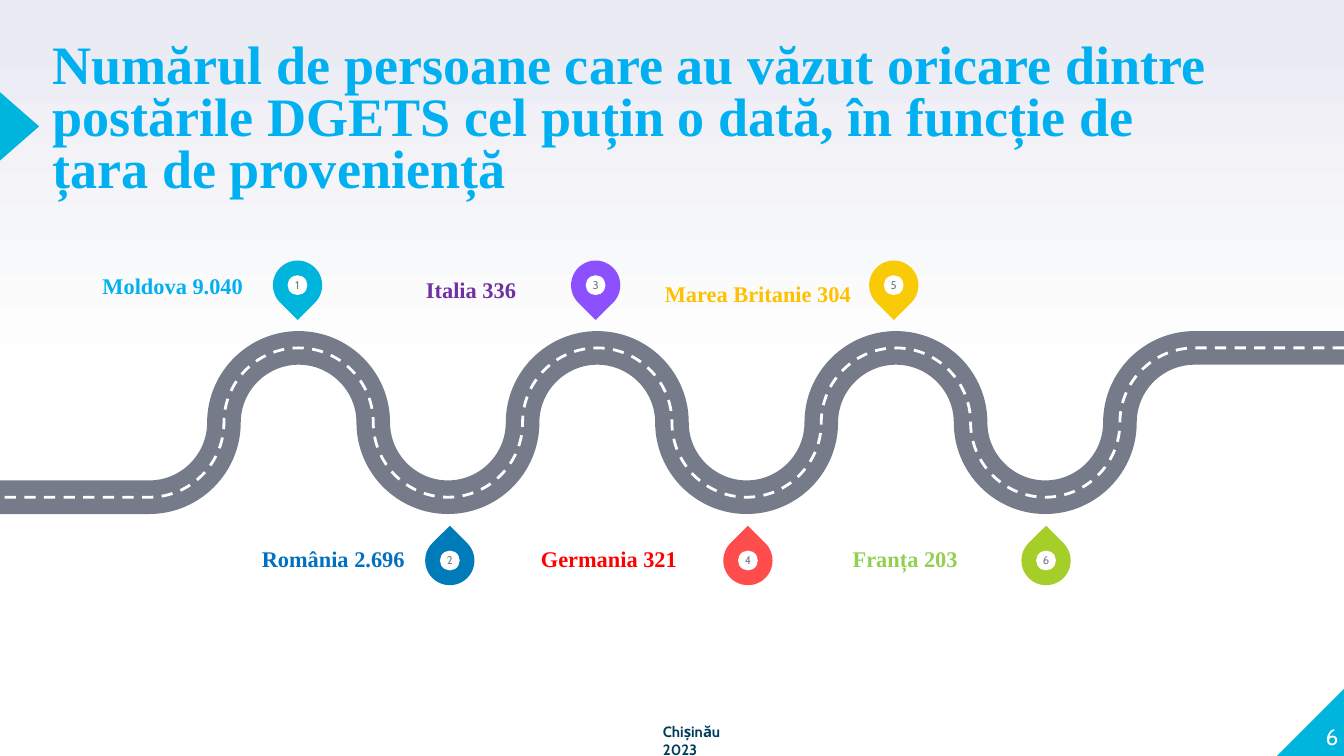
from dataclasses import dataclass

from lxml.etree import SubElement
from pptx import Presentation
from pptx.dml.color import RGBColor
from pptx.enum.dml import MSO_LINE
from pptx.enum.shapes import MSO_SHAPE
from pptx.enum.text import MSO_ANCHOR, PP_ALIGN
from pptx.oxml.ns import qn
from pptx.util import Pt

SERIF, SANS = "Times New Roman", "Cabin"
WHITE = RGBColor(0xFF, 0xFF, 0xFF)
LAVENDER = RGBColor(0xE9, 0xEA, 0xF2)
CYAN = RGBColor(0x00, 0xB5, 0xDD)
SKY = RGBColor(0x00, 0xB0, 0xF0)
GRAY = RGBColor(0x75, 0x7B, 0x89)
NAVY = RGBColor(0x00, 0x3D, 0x5C)
VIOLET = RGBColor(0x8C, 0x50, 0xFF)
PURPLE = RGBColor(0x70, 0x30, 0xA0)
YELLOW = RGBColor(0xF9, 0xCB, 0x07)
AMBER = RGBColor(0xFF, 0xC0, 0x00)
LIME = RGBColor(0xA6, 0xCE, 0x28)
GREEN = RGBColor(0x92, 0xD0, 0x50)
CORAL = RGBColor(0xFF, 0x4D, 0x4D)
RED = RGBColor(0xFF, 0x00, 0x00)
OCEAN = RGBColor(0x00, 0x7B, 0xB9)
BLUE = RGBColor(0x00, 0x70, 0xC0)

SLIDE_WIDTH, SLIDE_HEIGHT = 720, 405
ROAD_MIDDLE, BEND_RADIUS, QUARTER_COUNT = 226.4, 40, 14
ARC_HANDLE = 0.55  # control point distance for a quarter circle
PIN_SIZE, DOT_SIZE, PIN_PITCH = 26.4, 10.6, 159.7
LABEL_WIDTH, LABEL_HEIGHT = 101.5, 41.8


@dataclass(frozen=True)
class Stop:
    number: int
    label: str
    pin_color: RGBColor
    label_color: RGBColor
    label_left: float
    label_top: float

    @property
    def above_road(self) -> bool:
        return self.number % 2 == 1


STOPS = [
    Stop(1, "Moldova 9.040", CYAN, SKY, 41.8, 118.4),
    Stop(2, "România 2.696", OCEAN, BLUE, 127.8, 291.9),
    Stop(3, "Italia 336", VIOLET, PURPLE, 201.6, 120.6),
    Stop(4, "Germania 321", CORAL, RED, 275.5, 291.9),
    Stop(5, "Marea Britanie 304", YELLOW, AMBER, 355.3, 122.4),
    Stop(6, "Franța 203", LIME, GREEN, 434.2, 291.9),
]


def write_text(shape, text: str, *, size: float, color: RGBColor, font: str = SERIF,
               bold: bool = False, align=PP_ALIGN.LEFT, anchor=MSO_ANCHOR.TOP,
               line_spacing: float = 1.0, margins=(0, 0)) -> None:
    frame = shape.text_frame
    frame.word_wrap = True
    frame.vertical_anchor = anchor
    frame.margin_left = frame.margin_right = Pt(margins[0])
    frame.margin_top = frame.margin_bottom = Pt(margins[1])
    paragraph = frame.paragraphs[0]
    paragraph.text = text
    paragraph.alignment = align
    paragraph.line_spacing = line_spacing
    for run in paragraph.runs:
        run.font.name, run.font.size, run.font.bold = font, Pt(size), bold
        run.font.color.rgb = color


def add_text(slide, text: str, left: float, top: float, width: float, height: float,
             **text_format) -> None:
    box = slide.shapes.add_textbox(Pt(left), Pt(top), Pt(width), Pt(height))
    write_text(box, text, **text_format)


def add_solid(shapes, kind, left: float, top: float, width: float, height: float,
              color: RGBColor, rotation: float = 0):
    shape = shapes.add_shape(kind, Pt(left), Pt(top), Pt(width), Pt(height))
    shape.shadow.inherit = False
    shape.fill.solid()
    shape.fill.fore_color.rgb = color
    shape.line.fill.background()
    shape.rotation = rotation
    return shape


def road_points() -> list[tuple[float, float]]:
    """Ends of the quarter circles, right to left, with a straight piece at each end."""
    levels = (-1, 0, 1, 0)
    first_x = SLIDE_WIDTH - 2 * BEND_RADIUS
    bends = [(first_x - BEND_RADIUS * index, ROAD_MIDDLE + BEND_RADIUS * levels[index % 4])
             for index in range(QUARTER_COUNT + 1)]
    return [(SLIDE_WIDTH, bends[0][1]), *bends, (0, bends[-1][1])]


def round_bends(road) -> None:
    """Turn every segment between the straight ends into a quarter circle."""
    segments = list(road._element.iter(qn("a:lnTo")))
    ends = [(int(segment[0].get("x")), int(segment[0].get("y"))) for segment in segments]
    for index in range(QUARTER_COUNT):
        (x0, y0), (x1, y1) = ends[index:index + 2]
        step_x, step_y = ARC_HANDLE * (x1 - x0), ARC_HANDLE * (y1 - y0)
        if index % 2 == 0:
            controls = [(x0 + step_x, y0), (x1, y1 - step_y)]
        else:
            controls = [(x0, y0 + step_y), (x1 - step_x, y1)]
        curve = segments[index + 1]
        curve.tag = qn("a:cubicBezTo")
        end_point = curve[0]
        for x, y in controls:
            SubElement(curve, qn("a:pt"), x=str(round(x)), y=str(round(y)))
        curve.append(end_point)


def add_road(slide, color: RGBColor, width: float, dash=None) -> None:
    points = [(Pt(x), Pt(y)) for x, y in road_points()]
    builder = slide.shapes.build_freeform(*points[0])
    builder.add_line_segments(points[1:], close=False)
    road = builder.convert_to_shape()
    round_bends(road)
    road.shadow.inherit = False
    road.fill.background()
    road.line.color.rgb = color
    road.line.width = Pt(width)
    if dash is not None:
        road.line.dash_style = dash


def add_pin(slide, stop: Stop) -> None:
    column = (stop.number - 1) // 2
    center_x = (159.4 if stop.above_road else 241) + PIN_PITCH * column
    center_y = 152.8 if stop.above_road else 300.3
    group = slide.shapes.add_group_shape()
    add_solid(group.shapes, MSO_SHAPE.TEAR, center_x - PIN_SIZE / 2, center_y - PIN_SIZE / 2,
              PIN_SIZE, PIN_SIZE, stop.pin_color, 135 if stop.above_road else 315)
    dot = add_solid(group.shapes, MSO_SHAPE.OVAL, center_x - DOT_SIZE / 2,
                    center_y - DOT_SIZE / 2, DOT_SIZE, DOT_SIZE, WHITE)
    write_text(dot, str(stop.number), size=6, color=GRAY, font=SANS,
               align=PP_ALIGN.CENTER, anchor=MSO_ANCHOR.MIDDLE)


def main() -> None:
    presentation = Presentation()
    presentation.slide_width, presentation.slide_height = Pt(SLIDE_WIDTH), Pt(SLIDE_HEIGHT)
    slide = presentation.slides.add_slide(presentation.slide_layouts[6])

    # Background: white below, fading to lavender at the top
    background = slide.background.fill
    background.gradient()
    background.gradient_angle = 90
    for gradient_stop, position, color in zip(background.gradient_stops, (0.5, 1),
                                              (WHITE, LAVENDER)):
        gradient_stop.position = position
        gradient_stop.color.rgb = color

    # Corner and title marker
    add_solid(slide.shapes, MSO_SHAPE.RIGHT_TRIANGLE, 684, 368.4, 36.6, 36.6, CYAN, 270)
    add_solid(slide.shapes, MSO_SHAPE.ISOSCELES_TRIANGLE, -7.9, 57.2, 36.7, 21, CYAN, 90)

    # Title and page number
    add_text(slide, "Numărul de persoane care au văzut oricare dintre postările DGETS "
             "cel puțin o dată, în funcție de țara de proveniență",
             28.1, 23, 622, 85, size=29, color=SKY, bold=True, line_spacing=0.8)
    add_text(slide, "6", 681, 365, 36, 36.7, size=12, color=WHITE, font=SANS,
             align=PP_ALIGN.RIGHT, anchor=MSO_ANCHOR.BOTTOM)

    # Road with its dashed centre line
    add_road(slide, GRAY, 18)
    add_road(slide, WHITE, 1.5, MSO_LINE.DASH)

    # Countries along the road
    for stop in STOPS:
        add_pin(slide, stop)
        add_text(slide, stop.label, stop.label_left, stop.label_top, LABEL_WIDTH, LABEL_HEIGHT,
                 size=12, color=stop.label_color, bold=True, align=PP_ALIGN.CENTER,
                 anchor=MSO_ANCHOR.BOTTOM if stop.above_road else MSO_ANCHOR.TOP)

    # Footer
    add_text(slide, "Chișinău\v2023", 348, 383.8, 68.4, 17.3, size=8, color=NAVY,
             font=SANS, bold=True, margins=(7.2, 3.6))

    presentation.save("out.pptx")


if __name__ == "__main__":
    main()
